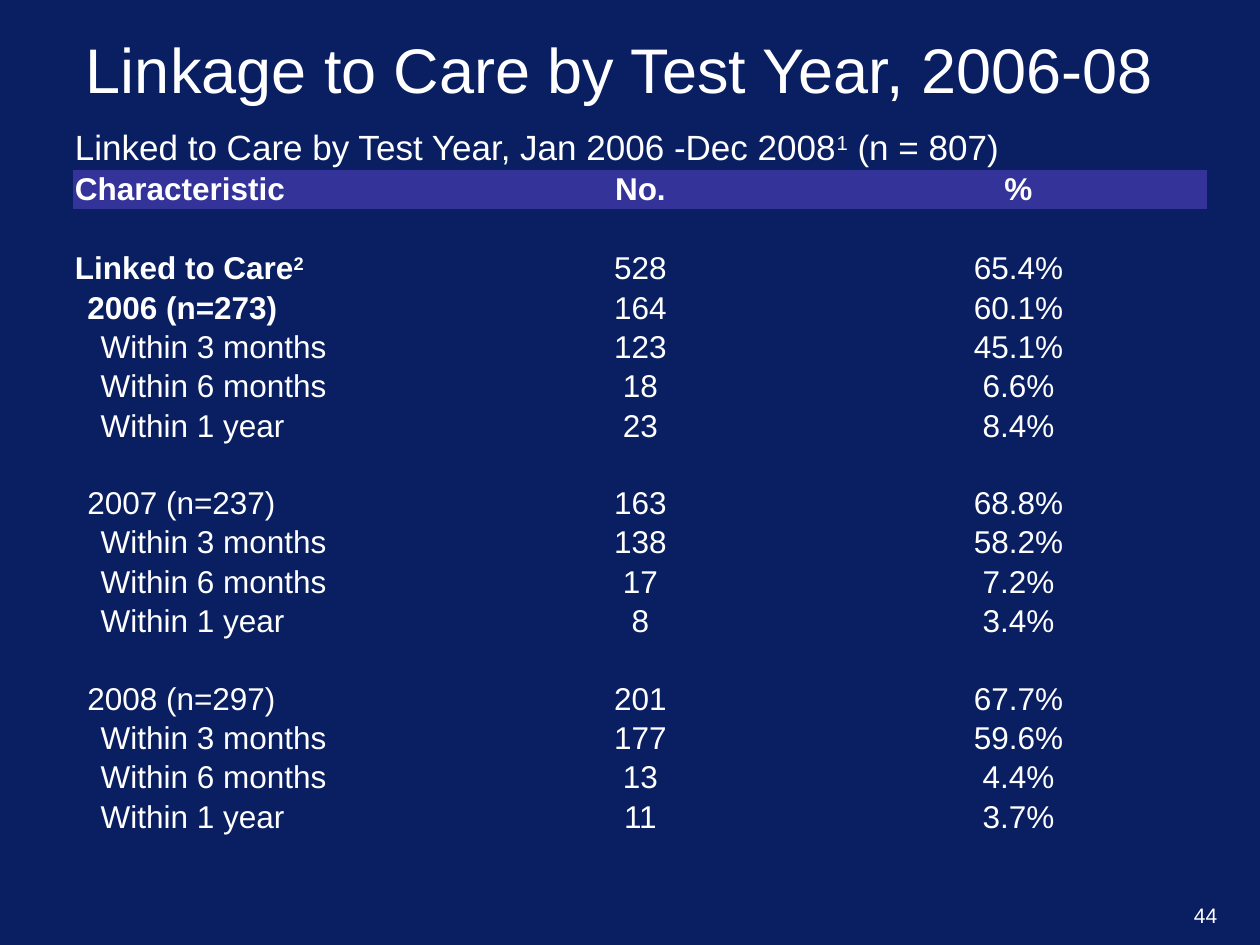
import pptx
import pptx.util
import pptx.dml.color
import pptx.enum.text
import pptx.oxml.ns
import lxml.etree

Cm = pptx.util.Cm
Pt = pptx.util.Pt
Align = pptx.enum.text.PP_ALIGN
Anchor = pptx.enum.text.MSO_ANCHOR
qn = pptx.oxml.ns.qn

NAVY = pptx.dml.color.RGBColor(0x09, 0x1F, 0x62)
VIOLET = pptx.dml.color.RGBColor(0x33, 0x33, 0x99)
WHITE = pptx.dml.color.RGBColor(0xFF, 0xFF, 0xFF)

FONT = "Arial"
NO_GRID = "{2D5ABB26-0587-4C30-8999-92F81FD0307C}"
INSETS = [Cm(0.03), Cm(0.28), Cm(0.55)]  # left inset by row level
SPANS = ["Within 3 months", "Within 6 months", "Within 1 year"]

# Year label, bold, total, then one pair for each span
YEARS = [
    ("2006 (n=273)", True, ("164", "60.1%"),
     [("123", "45.1%"), ("18", "6.6%"), ("23", "8.4%")]),
    ("2007 (n=237)", False, ("163", "68.8%"),
     [("138", "58.2%"), ("17", "7.2%"), ("8", "3.4%")]),
    ("2008 (n=297)", False, ("201", "67.7%"),
     [("177", "59.6%"), ("13", "4.4%"), ("11", "3.7%")]),
]


def add_run(para, text, size, bold=False, raised=False):
    run = para.add_run()
    run.text = text
    font = run.font
    font.name, font.size, font.bold = FONT, Pt(size), bold
    font.color.rgb = WHITE
    if raised:
        run._r.get_or_add_rPr().set("baseline", "30000")


def add_label(slide, box, text, size, align, anchor):
    frame = slide.shapes.add_textbox(*[Cm(n) for n in box]).text_frame
    frame.word_wrap = True
    frame.vertical_anchor = anchor
    para = frame.paragraphs[0]
    para.alignment = align
    add_run(para, text, size)


def set_cell(cell, parts, size=18, bold=False, align=Align.LEFT,
             anchor=Anchor.BOTTOM, level=0):
    """Fill a cell; every second part is superscript."""
    cell.margin_left = INSETS[level]
    cell.margin_right = cell.margin_top = Cm(0.03)
    cell.margin_bottom = 0
    cell.vertical_anchor = anchor
    para = cell.text_frame.paragraphs[0]
    para.alignment = align
    for i, part in enumerate(parts):
        add_run(para, part, size, bold, i % 2 == 1)
    if not parts:
        end = lxml.etree.SubElement(para._p, qn("a:endParaRPr"))
        end.set("sz", "1400")


def set_row(table, row, label, pair, bold=False, level=0):
    set_cell(table.cell(row, 0), label, bold=bold, level=level)
    for col, text in enumerate(pair, 1):
        set_cell(table.cell(row, col), [text] if text else [],
                 align=Align.CENTER)


def add_head(table):
    table.cell(0, 0).merge(table.cell(0, 2))
    set_cell(table.cell(0, 0),
             ["Linked to Care by Test Year, Jan 2006 -Dec 2008", "1",
              " (n = 807)"], size=20, anchor=Anchor.MIDDLE)
    for col, text in enumerate(["Characteristic", "No.", "%"]):
        cell = table.cell(1, col)
        set_cell(cell, [text], bold=True, anchor=Anchor.MIDDLE,
                 align=Align.CENTER if col else Align.LEFT)
        cell.fill.solid()
        cell.fill.fore_color.rgb = VIOLET


def add_grid(slide):
    count = 18
    frame = slide.shapes.add_table(count, 3, Cm(1.48), Cm(2.54),
                                   Cm(22.86), Cm(0.77 * count))
    table = frame.table
    table.first_row = table.horz_banding = False
    table._tbl.tblPr.find(qn("a:tableStyleId")).text = NO_GRID
    for col in table.columns:
        col.width = Cm(7.62)
    for row in table.rows:
        row.height = Cm(0.77)
        for cell in row.cells:
            cell.fill.background()
    table.rows[0].height = Cm(0.85)
    table.rows[1].height = Cm(0.79)

    # Header and overall total
    add_head(table)
    set_row(table, 2, [], ("", ""))
    set_row(table, 3, ["Linked to Care", "2"], ("528", "65.4%"), bold=True)

    # One block of five rows for each year, the last being a gap
    for i, (year, bold, total, pairs) in enumerate(YEARS):
        top = 4 + 5 * i
        set_row(table, top, [year], total, bold, level=1)
        for j, (span, pair) in enumerate(zip(SPANS, pairs), 1):
            set_row(table, top + j, [span], pair, level=2)
        if top + 4 < count:
            set_row(table, top + 4, [], ("", ""))
    table.cell(8, 0).merge(table.cell(8, 2))


def main():
    deck = pptx.Presentation()
    deck.slide_width, deck.slide_height = Cm(25.4), Cm(19.05)
    slide = deck.slides.add_slide(deck.slide_layouts[6])
    fill = slide.background.fill
    fill.solid()
    fill.fore_color.rgb = NAVY

    # Title, table and page number
    add_label(slide, (0.64, 0.43, 23.7, 1.9),
              "Linkage to Care by Test Year, 2006-08", 36,
              Align.CENTER, Anchor.MIDDLE)
    add_grid(slide)
    add_label(slide, (18.87, 18.06, 5.92, 0.86), "44", 12,
              Align.RIGHT, Anchor.TOP)
    deck.save("out.pptx")


if __name__ == "__main__":
    main()
